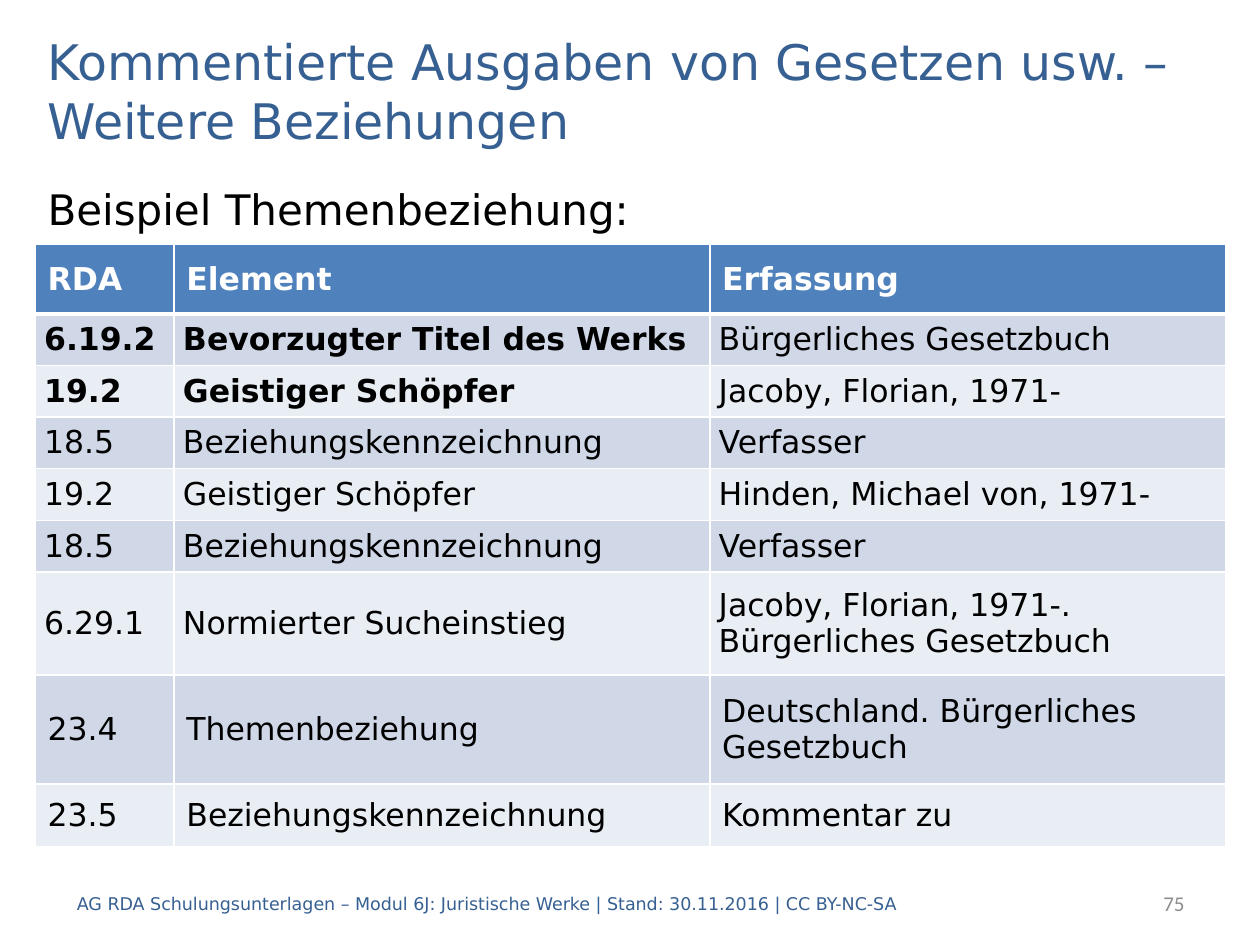
from lxml import etree
from pptx import Presentation
from pptx import util as u
from pptx.dml import color
from pptx.enum import text
from pptx.oxml import ns

NAVY, BLACK, WHITE, GREY = "376092", "000000", "FFFFFF", "8C8C8C"
HEADER_FILL, BANDS = "4F81BD", ("D0D8E8", "E9EDF4")
COLUMN_WIDTHS = (2.8, 10.8, 10.4)
ROW_HEIGHTS = (1.4, *[1.04] * 5, 2.08, 2.2, 1.27)
ENTRIES = (
    ("RDA", "Element", "Erfassung"),
    ("6.19.2", "Bevorzugter Titel des Werks", "Bürgerliches Gesetzbuch"),
    ("19.2", "Geistiger Schöpfer", "Jacoby, Florian, 1971-"),
    ("18.5", "Beziehungskennzeichnung", "Verfasser"),
    ("19.2", "Geistiger Schöpfer", "Hinden, Michael von, 1971-"),
    ("18.5", "Beziehungskennzeichnung", "Verfasser"),
    ("6.29.1", "Normierter Sucheinstieg", "Jacoby, Florian, 1971-. Bürgerliches Gesetzbuch"),
    ("23.4", "Themenbeziehung", "Deutschland. Bürgerliches Gesetzbuch"),
    ("23.5", "Beziehungskennzeichnung", "Kommentar zu"),
)
CORE_ROWS = (1, 2)
ROOMY_ROWS = (7, 8)


def rgb(value):
    return color.RGBColor.from_string(value)


def assign(target, values):
    for name, value in values.items():
        setattr(target, name, value)


class SlideBuilder:
    """Holds the style and the current slide, and adds each kind of element."""

    def __init__(self, slide, font="DejaVu Sans"):
        self.slide = slide
        self.font = font

    def wording(self, paragraph, words, size, ink, bold=False, font=None, **spacing):
        assign(paragraph, spacing)
        run = paragraph.add_run()
        run.text = words
        assign(run.font, {"name": font or self.font, "size": u.Pt(size), "bold": bold})
        run.font.color.rgb = rgb(ink)

    def label(self, box, words, size, ink, frame_format=None, **style):
        frame = self.slide.shapes.add_textbox(*map(u.Cm, box)).text_frame
        assign(frame, {"word_wrap": True, "auto_size": text.MSO_AUTO_SIZE.NONE,
                       "vertical_anchor": text.MSO_ANCHOR.MIDDLE, **(frame_format or {})})
        self.wording(frame.paragraphs[0], words, size, ink, **style)

    def borders(self, cell, widths):
        properties = cell._tc.get_or_add_tcPr()
        for position, (side, width) in enumerate(widths.items()):
            line = etree.Element(ns.qn(f"a:{side}"), w=str(u.Pt(width)))
            fill = etree.SubElement(line, ns.qn("a:solidFill"))
            etree.SubElement(fill, ns.qn("a:srgbClr"), val=WHITE)
            properties.insert(position, line)

    def cell(self, cell, words, row, column):
        header, roomy = row == 0, row in ROOMY_ROWS
        side, edge = (0.25, 0.13) if header or roomy else (0.18, 0)
        assign(cell, {"vertical_anchor": text.MSO_ANCHOR.MIDDLE,
                      "margin_left": u.Cm(side), "margin_right": u.Cm(side),
                      "margin_top": u.Cm(edge), "margin_bottom": u.Cm(edge)})
        cell.fill.solid()
        cell.fill.fore_color.rgb = rgb(HEADER_FILL if header else BANDS[(row - 1) % 2])
        self.borders(cell, {"lnL": 1, "lnR": 1, "lnT": 3 if row == 1 else 1,
                            "lnB": 3 if header else 1})
        self.wording(cell.text_frame.paragraphs[0], words, 18, WHITE if header else BLACK,
                     bold=header or (row in CORE_ROWS and column < 2),
                     space_before=u.Pt(6 if roomy else 0),
                     space_after=u.Pt(0 if header else 6))

    def table(self, left, top, entries):
        box = (left, top, sum(COLUMN_WIDTHS), sum(ROW_HEIGHTS))
        grid = self.slide.shapes.add_table(
            len(entries), len(COLUMN_WIDTHS), *map(u.Cm, box)).table
        for column, width in zip(grid.columns, COLUMN_WIDTHS):
            column.width = u.Cm(width)
        for row, height in zip(grid.rows, ROW_HEIGHTS):
            row.height = u.Cm(height)
        for row, entry in enumerate(entries):
            for column, words in enumerate(entry):
                self.cell(grid.cell(row, column), words, row, column)


def main():
    deck = Presentation()
    assign(deck, {"slide_width": u.Cm(25.4), "slide_height": u.Cm(19.05)})
    builder = SlideBuilder(deck.slides.add_slide(deck.slide_layouts[6]))
    builder.label((0.71, 1.12, 24, 1.42),
                  "Kommentierte Ausgaben von Gesetzen usw. – Weitere Beziehungen", 28, NAVY)
    builder.label((0.71, 2.34, 24, 15.19), "Beispiel Themenbeziehung:", 24, BLACK,
                  {"vertical_anchor": text.MSO_ANCHOR.TOP, "margin_top": u.Cm(1.35)})
    builder.label((20.09, 17.7, 4.04, 1.02), "75", 12, GREY, font="Calibri",
                  alignment=text.PP_ALIGN.RIGHT)
    builder.label((1.3, 17.7, 18, 1.02),
                  "AG RDA Schulungsunterlagen – Modul 6J: Juristische Werke | "
                  "Stand: 30.11.2016 | CC BY-NC-SA", 10, NAVY)
    builder.table(0.71, 4.93, ENTRIES)
    deck.save("out.pptx")


if __name__ == "__main__":
    main()
